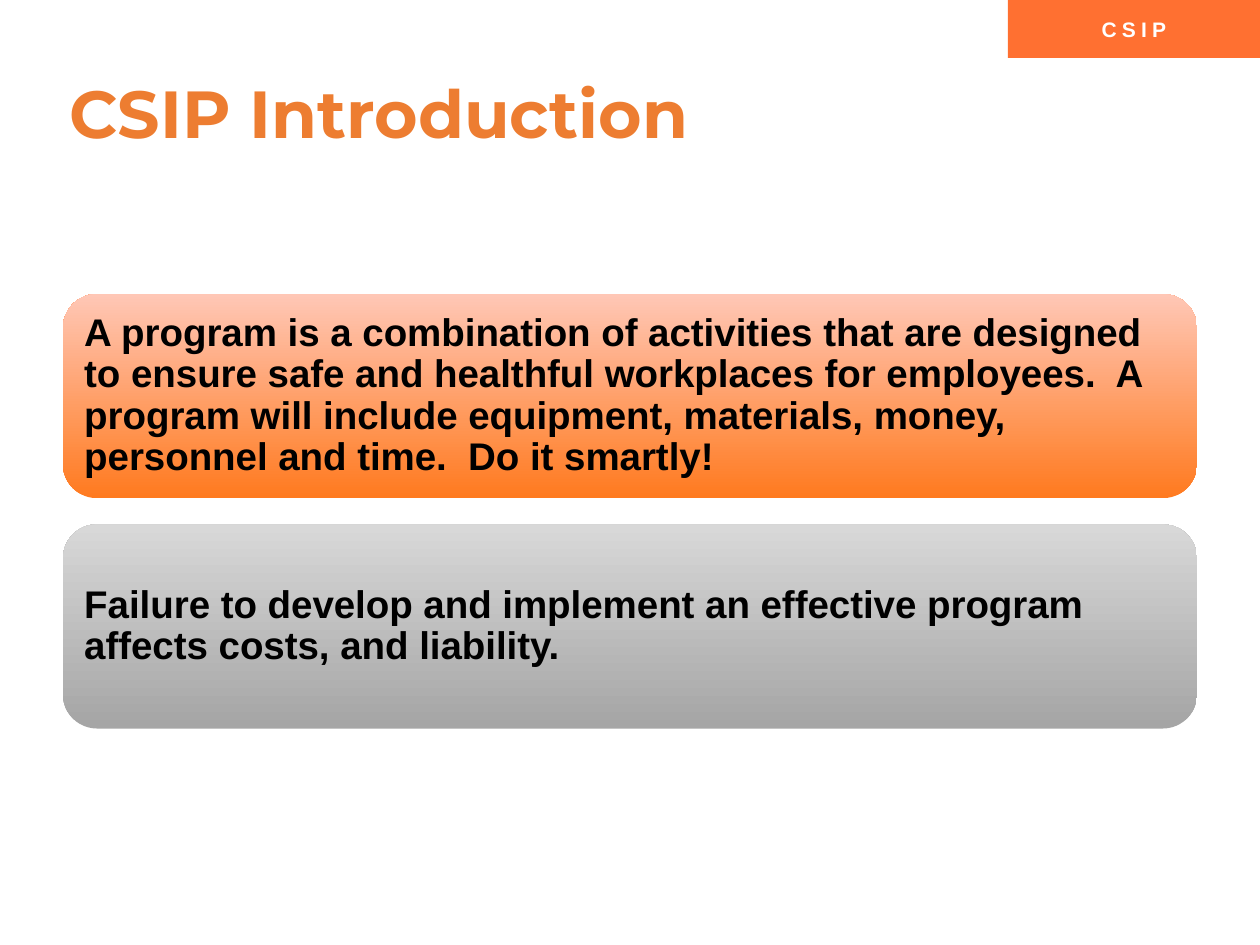
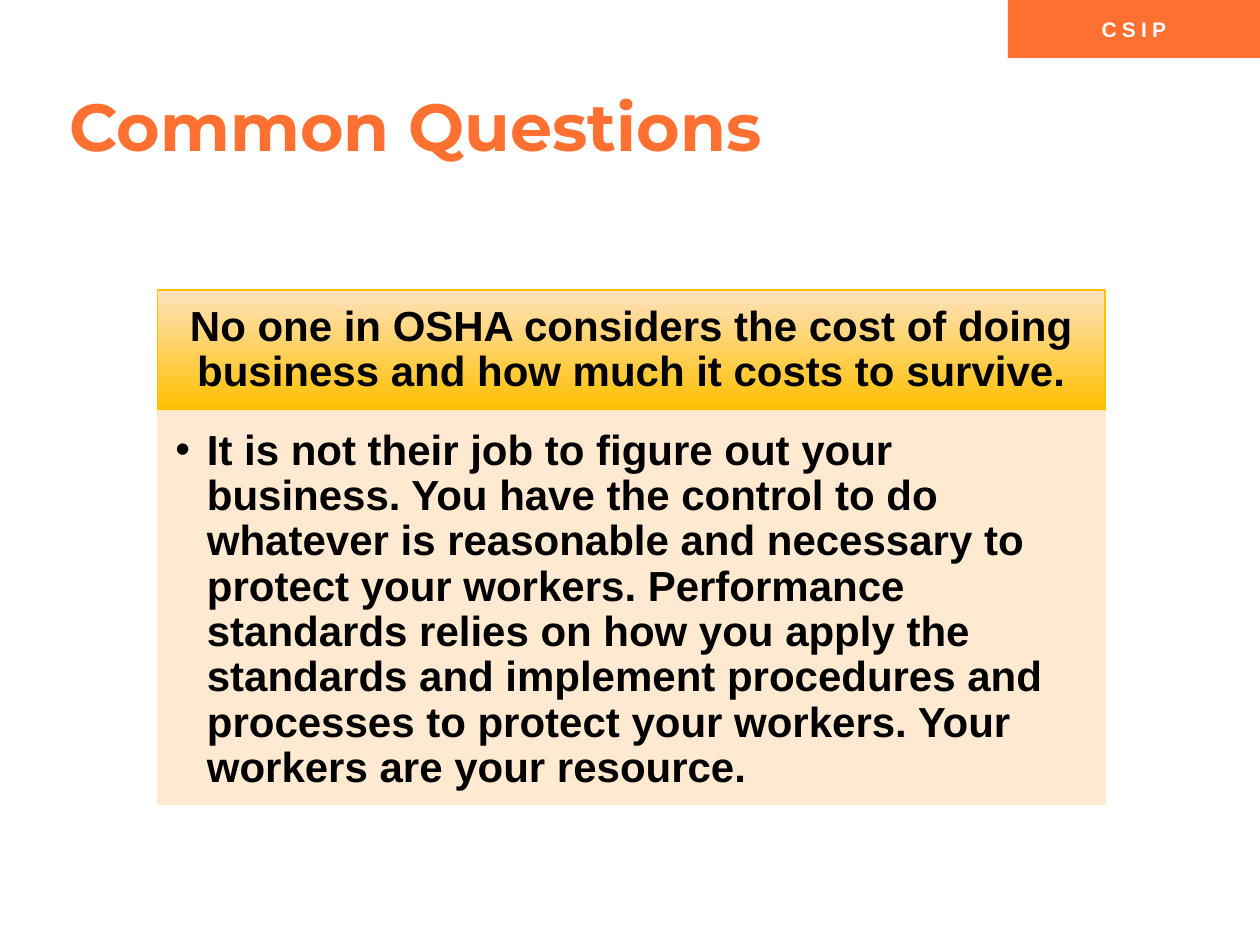
from dataclasses import dataclass
from typing import Optional

from lxml import etree
from pptx import Presentation
from pptx.dml.color import RGBColor
from pptx.enum.shapes import MSO_SHAPE
from pptx.enum.text import MSO_ANCHOR, PP_ALIGN
from pptx.oxml.ns import qn
from pptx.util import Pt

RECTANGLE = MSO_SHAPE.RECTANGLE
ROUNDED = MSO_SHAPE.ROUNDED_RECTANGLE
TOP, MIDDLE = MSO_ANCHOR.TOP, MSO_ANCHOR.MIDDLE
LEFT, CENTER = PP_ALIGN.LEFT, PP_ALIGN.CENTER


@dataclass(frozen=True)
class Theme:
    heading_font: str = "Montserrat"
    body_font: str = "Arial"
    brand: str = "FF7031"
    title_orange: str = "ED7D31"
    white: str = "FFFFFF"
    black: str = "000000"
    amber: str = "FFC000"
    cream: str = "FFE8CC"
    orange_fade: tuple[str, str] = ("FF7A1F", "FFC7B6")
    gray_fade: tuple[str, str] = ("A5A5A5", "D8D8D8")
    amber_fade: tuple[str, str] = ("FFC000", "FFE2BD")
    tag_size: float = 12
    title_size: float = 38
    card_size: float = 22
    question_size: float = 24
    line_spacing: float = 0.9


THEME = Theme()


@dataclass(frozen=True)
class Box:
    left: float
    top: float
    width: float
    height: float


@dataclass(frozen=True)
class TextStyle:
    size: float
    color: str = THEME.black
    font: str = THEME.body_font
    align: PP_ALIGN = LEFT
    anchor: MSO_ANCHOR = MIDDLE
    insets: tuple[float, float, float, float] = (3.6, 3.6, 3.6, 3.6)
    line_spacing: float = THEME.line_spacing
    tracking: float = 0
    hanging: float = 0


@dataclass(frozen=True)
class Panel:
    box: Box
    text: str
    style: TextStyle
    fill: str | tuple[str, str]
    outline: Optional[str] = None
    opacity: int = 100
    outline_shape: MSO_SHAPE = RECTANGLE


@dataclass(frozen=True)
class Page:
    title: str
    title_box: Box
    title_color: str
    panels: list[Panel]


TAG = Panel(
    Box(576, 0, 144, 33.12), "CSIP",
    TextStyle(THEME.tag_size, THEME.white, align=CENTER, line_spacing=1, tracking=3),
    THEME.brand,
)

CARD_STYLE = TextStyle(THEME.card_size, insets=(6.48, 6.48, 6.48, 6.48))
CARD_TOP, CARD_HEIGHT, CARD_GAP = 168, 116.64, 15
CARDS = [
    ("A program is a combination of activities that are designed to ensure safe and "
     "healthful workplaces for employees.  A program will include equipment, materials, "
     "money, personnel and time.  Do it smartly!", THEME.orange_fade),
    ("Failure to develop and implement an effective program affects costs, and liability.",
     THEME.gray_fade),
]

QUESTION_LEFT, QUESTION_WIDTH = 90, 541.5
QUESTION_TOP, QUESTION_HEIGHT, ANSWER_HEIGHT = 165.8, 69, 224.8

PAGES = [
    Page(
        "CSIP Introduction", Box(36, 7.2, 648, 118.8), THEME.title_orange,
        [
            Panel(
                Box(36, CARD_TOP + row * (CARD_HEIGHT + CARD_GAP), 648, CARD_HEIGHT),
                text, CARD_STYLE, fade, outline_shape=ROUNDED,
            )
            for row, (text, fade) in enumerate(CARDS)
        ],
    ),
    Page(
        "Common Questions", Box(36, 23, 648, 103), THEME.brand,
        [
            Panel(
                Box(QUESTION_LEFT, QUESTION_TOP, QUESTION_WIDTH, QUESTION_HEIGHT),
                "No one in OSHA considers the cost of doing business and how much it "
                "costs to survive.",
                TextStyle(THEME.question_size, align=CENTER, insets=(13.68, 7.8, 13.68, 7.8)),
                THEME.amber_fade, THEME.amber,
            ),
            Panel(
                Box(QUESTION_LEFT, QUESTION_TOP + QUESTION_HEIGHT, QUESTION_WIDTH, ANSWER_HEIGHT),
                "It is not their job to figure out your business. You have the control to do "
                "whatever is reasonable and necessary to protect your workers. Performance "
                "standards relies on how you apply the standards and implement procedures and "
                "processes to protect your workers. Your workers are your resource.",
                TextStyle(THEME.question_size, anchor=TOP, insets=(10.24, 10.24, 13.68, 15.36),
                          hanging=18),
                THEME.cream, THEME.cream, opacity=90,
            ),
        ],
    ),
]


def place(box: Box) -> tuple[Pt, Pt, Pt, Pt]:
    return Pt(box.left), Pt(box.top), Pt(box.width), Pt(box.height)


def write(shape, text: str, style: TextStyle) -> None:
    frame = shape.text_frame
    frame.word_wrap = True
    frame.vertical_anchor = style.anchor
    (frame.margin_left, frame.margin_top,
     frame.margin_right, frame.margin_bottom) = map(Pt, style.insets)
    frame.text = text
    paragraph = frame.paragraphs[0]
    paragraph.alignment = style.align
    paragraph.line_spacing = style.line_spacing
    if style.hanging:
        properties = paragraph._p.get_or_add_pPr()
        properties.set("marL", str(Pt(style.hanging)))
        properties.set("indent", str(-Pt(style.hanging)))
        etree.SubElement(properties, qn("a:buFont"), typeface=style.font)
        etree.SubElement(properties, qn("a:buChar"), char="•")
    run = paragraph.runs[0]
    run.font.name = style.font
    run.font.size = Pt(style.size)
    run.font.bold = True
    run.font.color.rgb = RGBColor.from_string(style.color)
    if style.tracking:
        run.font._element.set("spc", str(round(style.tracking * 100)))


def paint(shape, panel: Panel) -> None:
    if isinstance(panel.fill, tuple):
        shape.fill.gradient()
        shape.fill.gradient_angle = 90
        for stop, color, position in zip(shape.fill.gradient_stops, panel.fill, (0, 1)):
            stop.color.rgb = RGBColor.from_string(color)
            stop.position = position
    else:
        shape.fill.solid()
        shape.fill.fore_color.rgb = RGBColor.from_string(panel.fill)
    if panel.outline:
        shape.line.color.rgb = RGBColor.from_string(panel.outline)
        shape.line.width = Pt(0.75)
    else:
        shape.line.fill.background()
    if panel.opacity < 100:
        for color in shape._element.spPr.iter(qn("a:srgbClr")):
            etree.SubElement(color, qn("a:alpha"), val=str(panel.opacity * 1000))


def draw_panel(slide, panel: Panel) -> None:
    shape = slide.shapes.add_shape(panel.outline_shape, *place(panel.box))
    shape.shadow.inherit = False
    paint(shape, panel)
    write(shape, panel.text, panel.style)


def draw_page(deck, page: Page) -> None:
    slide = deck.slides.add_slide(deck.slide_layouts[6])
    draw_panel(slide, TAG)
    title = slide.shapes.add_textbox(*place(page.title_box))
    write(title, page.title, TextStyle(THEME.title_size, page.title_color, THEME.heading_font))
    for panel in page.panels:
        draw_panel(slide, panel)


def main() -> None:
    deck = Presentation()
    deck.slide_width, deck.slide_height = Pt(720), Pt(540)
    for page in PAGES:
        draw_page(deck, page)
    deck.save("out.pptx")


if __name__ == "__main__":
    main()
